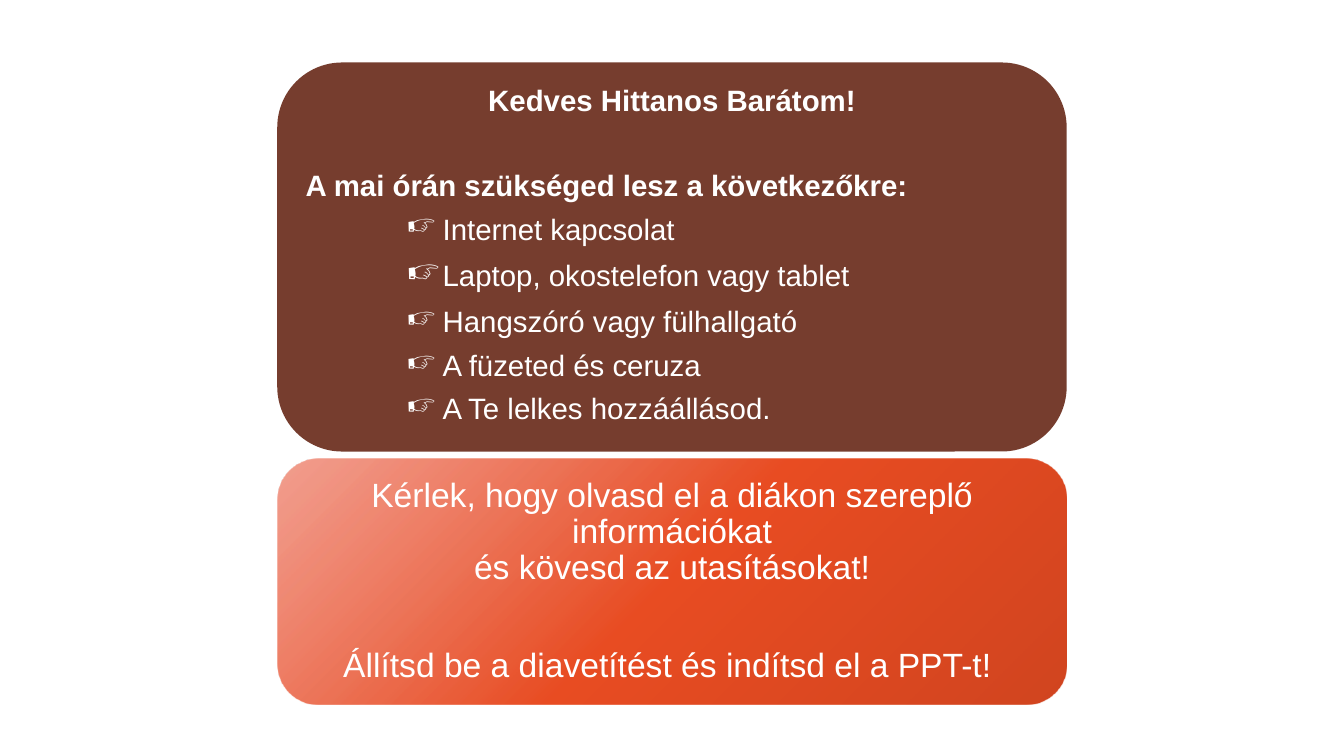
import pptx
import pptx.dml.color
import pptx.enum.shapes
import pptx.enum.text
import pptx.oxml
import pptx.oxml.ns
import pptx.util
from dataclasses import dataclass
from lxml import etree

Inches = pptx.util.Inches
Pt = pptx.util.Pt
qn = pptx.oxml.ns.qn
PP_ALIGN = pptx.enum.text.PP_ALIGN


@dataclass(frozen=True)
class Theme:
    font: str = "Arial"
    text: str = "FFFFFF"
    brown: tuple = ((0, "591300", 82),)
    orange: tuple = ((0, "E95E44", 59), (50, "E84C22", 100), (100, "D0441F", 100))
    list_size: float = 21
    request_size: float = 24
    line_spacing: float = 0.9
    list_gap: float = 8.4
    request_gap: float = 9.6
    list_blank: float = 38.4
    request_blank: float = 44


def add_color(parent, color, opacity):
    node = etree.SubElement(parent, qn("a:srgbClr"), val=color)
    if opacity < 100:
        etree.SubElement(node, qn("a:alpha"), val=str(opacity * 1000))


def write(paragraph, text, theme, size, after, bold=False,
          align=PP_ALIGN.LEFT, before=0, bullet=None, bullet_scale=100):
    if bullet:
        props = paragraph._p.get_or_add_pPr()
        props.set("marL", str(Inches(1.36)))
        props.set("indent", str(Inches(-0.36)))
        etree.SubElement(props, qn("a:buSzPct"), val=str(bullet_scale * 1000))
        etree.SubElement(props, qn("a:buChar"), char=bullet)
    paragraph.text = text
    paragraph.alignment = align
    paragraph.line_spacing = theme.line_spacing
    paragraph.space_after = Pt(after)
    if before:
        paragraph.space_before = Pt(before)
    for run in paragraph.runs:
        run.font.name = theme.font
        run.font.size = Pt(size)
        run.font.bold = bold
        run.font.color.rgb = pptx.dml.color.RGBColor.from_string(theme.text)


class SlideBuilder:
    def __init__(self, slide, theme):
        self.slide = slide
        self.theme = theme

    def panel(self, left, top, width, height, stops):
        panel = self.slide.shapes.add_shape(
            pptx.enum.shapes.MSO_SHAPE.ROUNDED_RECTANGLE,
            Inches(left), Inches(top), Inches(width), Inches(height))
        panel.shadow.inherit = False
        panel.line.fill.background()
        if len(stops) == 1:
            panel.fill.solid()
            fill = panel._element.spPr.find(qn("a:solidFill"))
            add_color(fill, *stops[0][1:])
        else:
            panel.fill.gradient()
            panel.fill.gradient_angle = 315
            stop_list = panel._element.spPr.find(qn("a:gradFill")).find(qn("a:gsLst"))
            for stop in list(stop_list):
                stop_list.remove(stop)
            for position, color, opacity in stops:
                stop = etree.SubElement(stop_list, qn("a:gs"), pos=str(position * 1000))
                add_color(stop, color, opacity)

    def message(self, left, top, width, height, inset, paragraphs):
        box = self.slide.shapes.add_textbox(
            Inches(left), Inches(top), Inches(width), Inches(height))
        frame = box.text_frame
        frame.word_wrap = True
        frame.vertical_anchor = pptx.enum.text.MSO_ANCHOR.MIDDLE
        frame.margin_left = frame.margin_right = Inches(inset)
        frame.margin_top = frame.margin_bottom = Inches(inset)
        for index, (text, style) in enumerate(paragraphs):
            paragraph = frame.add_paragraph() if index else frame.paragraphs[0]
            write(paragraph, text, self.theme, **style)


def main():
    theme = Theme()
    deck = pptx.Presentation()
    deck.slide_width, deck.slide_height = Inches(13.33), Inches(7.5)
    builder = SlideBuilder(deck.slides.add_slide(deck.slide_layouts[6]), theme)

    heading = dict(size=theme.list_size, bold=True)
    item = dict(size=theme.list_size, after=theme.list_gap, bullet="☞")
    large_item = dict(item, after=theme.list_gap + 2, before=2, bullet_scale=114)
    request = dict(size=theme.request_size, align=PP_ALIGN.CENTER)

    builder.panel(2.75, 0.62, 7.83, 3.86, theme.brown)
    builder.message(2.94, 0.8, 7.45, 3.48, 0.09, [
        ("Kedves Hittanos Barátom!",
         dict(heading, after=theme.list_blank, align=PP_ALIGN.CENTER)),
        ("A mai órán szükséged lesz a következőkre:",
         dict(heading, after=theme.list_gap)),
        ("Internet kapcsolat", item),
        ("Laptop, okostelefon vagy tablet", large_item),
        ("Hangszóró vagy fülhallgató", item),
        ("A füzeted és ceruza", item),
        ("A Te lelkes hozzáállásod.", item),
    ])

    builder.panel(2.75, 4.55, 7.83, 2.44, theme.orange)
    builder.message(2.87, 4.67, 7.59, 2.2, 0.1, [
        ("Kérlek, hogy olvasd el a diákon szereplő információkat\v"
         "és kövesd az utasításokat!", dict(request, after=theme.request_blank)),
        ("Állítsd be a diavetítést és indítsd el a PPT-t! ",
         dict(request, after=theme.request_gap)),
    ])

    deck.save("out.pptx")


if __name__ == "__main__":
    main()
